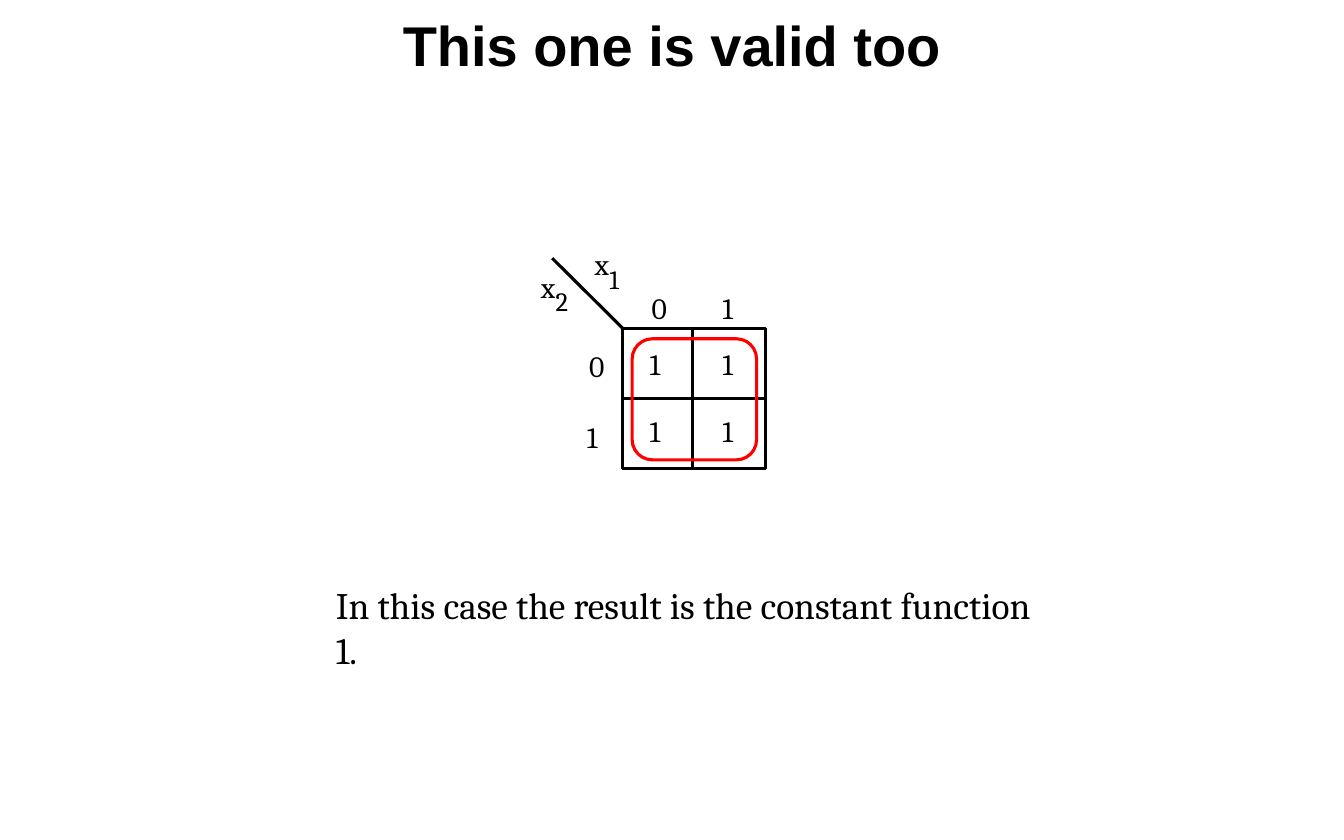
from pptx import Presentation
from pptx.dml.color import RGBColor
from pptx.enum.shapes import MSO_CONNECTOR, MSO_SHAPE as SHAPE
from pptx.enum.text import MSO_ANCHOR as ANCHOR, PP_ALIGN as ALIGN
from pptx.oxml.ns import qn
from pptx.util import Pt
from lxml import etree

BLACK, WHITE, RED = "000000", "FFFFFF", "FF0000"


def color(hex_value):
    return RGBColor.from_string(hex_value)


def add_text(words, left, top, width, height, size, font="Cambria", inset=0):
    box = slide.shapes.add_textbox(Pt(left), Pt(top), Pt(width), Pt(height))
    frame = box.text_frame
    frame.word_wrap = True
    if inset == 0:
        frame.margin_left = frame.margin_right = 0
        frame.margin_top = frame.margin_bottom = 0
    run = frame.paragraphs[0].add_run()
    run.text = words
    run.font.name = font
    run.font.size = Pt(size)
    run.font.color.rgb = color(BLACK)
    return frame


prs = Presentation()
prs.slide_width, prs.slide_height = Pt(864), Pt(540)
slide = prs.slides.add_slide(prs.slide_layouts[6])

# Karnaugh map frame
map_left, map_top, map_width, map_height = 400.3, 211, 92, 90
map_right, map_bottom = map_left + map_width, map_top + map_height
row_split, column_split = map_top + map_height / 2, 445
karnaugh = slide.shapes.add_shape(
    SHAPE.RECTANGLE, Pt(map_left), Pt(map_top), Pt(map_width), Pt(map_height))
karnaugh.shadow.inherit = False
karnaugh.fill.solid()
karnaugh.fill.fore_color.rgb = color(WHITE)
karnaugh.line.color.rgb = color(BLACK)
karnaugh.line.width = Pt(2)

# Row divider, column divider and the diagonal between the variables
dividers = []
for x1, y1, x2, y2 in [
    (map_right, row_split, map_left, row_split),
    (column_split, map_bottom, column_split, map_top),
    (355, 166, map_left, map_top),
]:
    divider = slide.shapes.add_connector(
        MSO_CONNECTOR.STRAIGHT, Pt(x1), Pt(y1), Pt(x2), Pt(y2))
    divider.line.color.rgb = color(BLACK)
    divider.line.width = Pt(2)
    etree.SubElement(divider._element.spPr, qn("a:effectLst"))
    dividers.append(divider)
dividers[0].begin_connect(karnaugh, 3)
dividers[0].end_connect(karnaugh, 1)

# Variable names with their subscripts
for subscript, left, top in [("2", 347.8, 173), ("1", 382.3, 158.4)]:
    add_text("x", left, top, 14.4, 23, 19)
    add_text(subscript, left + 9.4, top + 10.4, 13, 21, 17)

# Row and column headings
for digit, left, top in [
    ("0", 378.7, 224), ("1", 377.3, 269.3),
    ("0", 419, 186.5), ("1", 464.4, 186.5),
]:
    add_text(digit, left, top, 14.4, 23, 19)

# Cell values
for top in (222.5, 265.7):
    for left in (417.6, 464.4):
        add_text("1", left, top, 10, 23, 19)

# Title
title = add_text("This one is valid too", 72, 1.5, 720, 54, 36, "Arial", inset=None)
title.vertical_anchor = ANCHOR.MIDDLE
title.paragraphs[0].alignment = ALIGN.CENTER
title.paragraphs[0].runs[0].font.bold = True

# Loop around all four ones
loop = slide.shapes.add_shape(
    SHAPE.ROUNDED_RECTANGLE, Pt(407.5), Pt(216.7), Pt(77.8), Pt(80))
loop.rotation = 270
loop.shadow.inherit = False
loop.fill.background()
loop.line.color.rgb = color(RED)
loop.line.width = Pt(2)

# Conclusion
add_text("In this case the result is the constant function 1.",
         208.8, 370.8, 475.2, 36.7, 24, inset=None)

prs.save("out.pptx")
